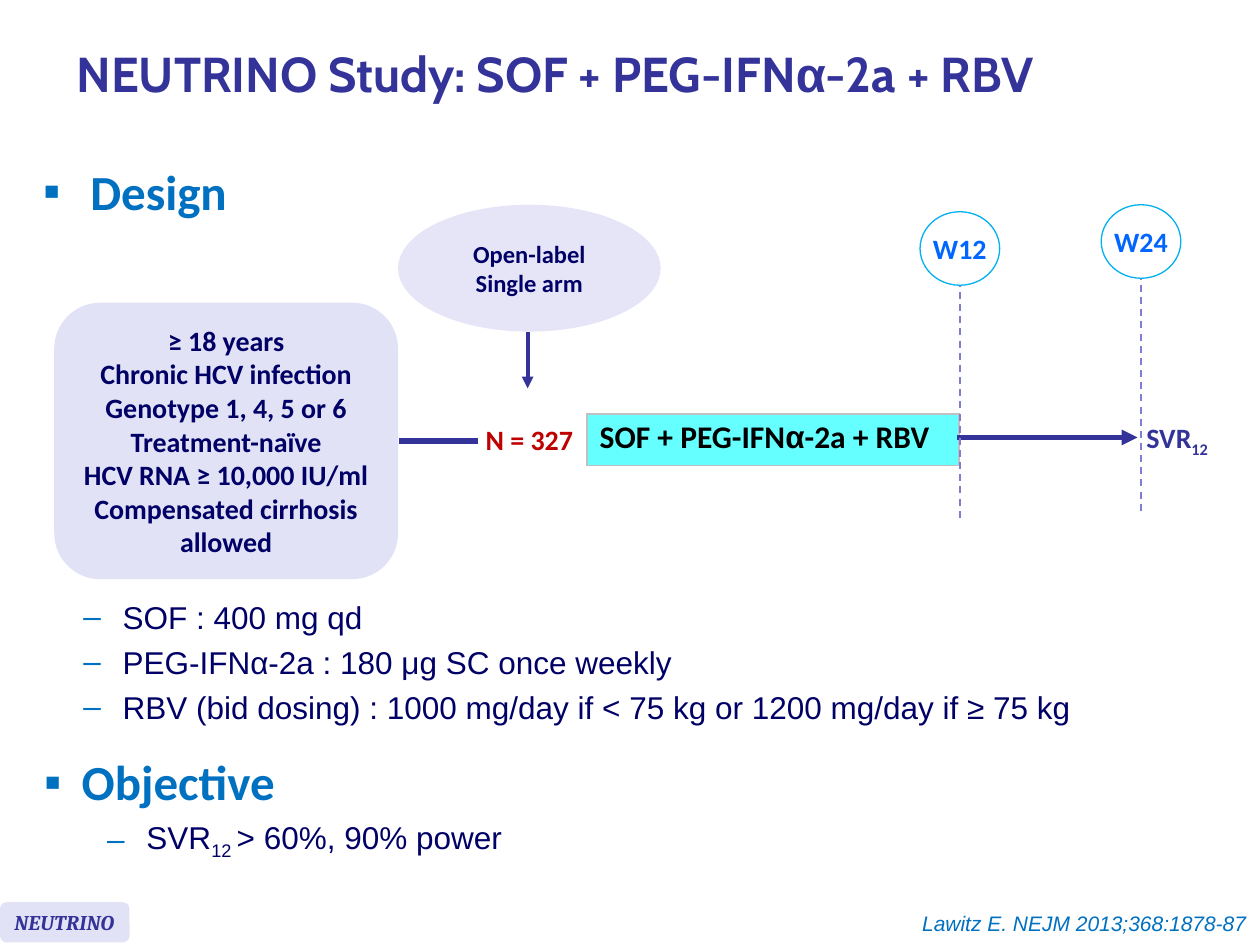
import dataclasses
import typing

import pptx
import pptx.dml.color
import pptx.enum.dml
import pptx.enum.shapes
import pptx.enum.text
import pptx.oxml.ns
import pptx.oxml.xmlchemy
import pptx.util
from lxml import etree

Pt = pptx.util.Pt
qn = pptx.oxml.ns.qn
Align = pptx.enum.text.PP_ALIGN
Anchor = pptx.enum.text.MSO_ANCHOR
Form = pptx.enum.shapes.MSO_SHAPE

HUES = {
    "indigo": "333399", "navy": "000066", "blue": "0070C0", "bright": "0066FF",
    "sky": "00B0F0", "dash": "7E7ED4", "pale": "E5E5F7", "lilac": "E2E2F6",
    "red": "C00000", "cyan": "66FFFF", "grey": "C0C0C0", "white": "FFFFFF",
    "black": "000000",
}


@dataclasses.dataclass
class Style:
    size: float
    hue: str
    font: str = "Calibri"
    bold: bool = True
    slant: bool = False


@dataclasses.dataclass
class Span:
    text: str
    font: typing.Optional[str] = None
    sub: bool = False


@dataclasses.dataclass
class Line:
    spans: list[Span]
    style: Style
    mark: str = ""
    level: int = 0
    indent: float = 0
    hang: float = 0
    gap: float = 0
    align: Align = Align.LEFT
    lead: typing.Optional[float] = None


@dataclasses.dataclass
class Box:
    left: float
    top: float
    width: float
    height: float
    lines: list[Line]
    form: typing.Optional[Form] = None
    fill: str = ""
    edge: str = ""


@dataclasses.dataclass
class Rule:
    start: tuple[float, float]
    end: tuple[float, float]
    hue: str
    width: float
    dash: bool = False
    head: bool = False


def color(name: str) -> pptx.dml.color.RGBColor:
    return pptx.dml.color.RGBColor.from_string(HUES[name])


def add_mark(para, line: Line) -> None:
    props = para._p.get_or_add_pPr()
    props.set("marL", str(Pt(line.indent)))
    props.set("indent", str(-Pt(line.hang)))
    tint = etree.SubElement(props, qn("a:buClr"))
    etree.SubElement(tint, qn("a:srgbClr"), val=HUES["blue"])
    etree.SubElement(props, qn("a:buFont"), typeface="Arial")
    etree.SubElement(props, qn("a:buChar"), char=line.mark)


def write(frame, lines: list[Line]) -> None:
    for index, line in enumerate(lines):
        para = frame.add_paragraph() if index else frame.paragraphs[0]
        para.level = line.level
        para.alignment = line.align
        para.space_before = Pt(line.gap if index else 0)
        if line.lead:
            para.line_spacing = line.lead
        if line.mark:
            add_mark(para, line)
        for span in line.spans:
            run = para.add_run()
            run.text = span.text
            font = run.font
            font.name = span.font or line.style.font
            font.size = Pt(line.style.size)
            font.bold = line.style.bold
            font.italic = line.style.slant
            font.color.rgb = color(line.style.hue)
            if span.sub:
                run._r.get_or_add_rPr().set("baseline", "-25000")


def place(shape, box: Box, wrap: bool, anchor: Anchor) -> None:
    shape.left, shape.top = Pt(box.left), Pt(box.top)
    shape.width, shape.height = Pt(box.width), Pt(box.height)
    frame = shape.text_frame
    frame.word_wrap = wrap
    frame.auto_size = pptx.enum.text.MSO_AUTO_SIZE.NONE
    frame.vertical_anchor = anchor
    write(frame, box.lines)


def draw_box(slide, box: Box, wrap: bool = False) -> None:
    area = Pt(box.left), Pt(box.top), Pt(box.width), Pt(box.height)
    if box.form is None:
        place(slide.shapes.add_textbox(*area), box, wrap, Anchor.TOP)
        return
    shape = slide.shapes.add_shape(box.form, *area)
    shape.shadow.inherit = False
    shape.fill.solid()
    shape.fill.fore_color.rgb = color(box.fill)
    if box.edge:
        shape.line.color.rgb = color(box.edge)
        shape.line.width = Pt(0.75)
    else:
        shape.line.fill.background()
    place(shape, box, wrap, Anchor.MIDDLE)


def draw_rule(slide, rule: Rule) -> None:
    ends = [Pt(value) for value in rule.start + rule.end]
    link = slide.shapes.add_connector(pptx.enum.shapes.MSO_CONNECTOR.STRAIGHT, *ends)
    link.line.color.rgb = color(rule.hue)
    link.line.width = Pt(rule.width)
    if rule.dash:
        link.line.dash_style = pptx.enum.dml.MSO_LINE.DASH
    if rule.head:
        etree.SubElement(link.get_or_add_ln(), qn("a:tailEnd"), type="triangle")
    etree.SubElement(link._element.spPr, qn("a:effectLst"))


def draw_drug(slide, box: Box) -> None:
    area = Pt(box.left), Pt(box.top), Pt(box.width), Pt(box.height)
    table = slide.shapes.add_table(1, 1, *area).table
    table.first_row = table.horz_banding = False
    cell = table.cell(0, 0)
    props = cell._tc.get_or_add_tcPr()
    for side in ("L", "R", "T", "B"):
        edge = etree.SubElement(props, qn(f"a:ln{side}"), w=str(Pt(1)))
        fill = etree.SubElement(edge, qn("a:solidFill"))
        etree.SubElement(fill, qn("a:srgbClr"), val=HUES["grey"])
    cell.fill.solid()
    cell.fill.fore_color.rgb = color(box.fill)
    cell.vertical_anchor = Anchor.MIDDLE
    write(cell.text_frame, box.lines)


def center(style: Style, *texts: str) -> list[Line]:
    return [Line([Span(text)], style, align=Align.CENTER) for text in texts]


def drug(start: str) -> list[Span]:
    return [Span(start), Span("α", "Arial"), Span("-2a + RBV")]


def head(text: str, hang: float) -> Line:
    return Line([Span(text)], Style(28, "blue"), "▪", indent=hang, hang=hang)


def item(*spans: Span) -> Line:
    style = Style(18, "navy", "Arial", False)
    return Line(list(spans), style, "–", 1, 58.5, 22.5, 4.2)


def main() -> None:
    deck = pptx.Presentation()
    deck.slide_width, deck.slide_height = Pt(720), Pt(540)
    slide = deck.slides.add_slide(deck.slide_layouts[1])

    title = Line(drug("NEUTRINO Study: SOF + PEG-IFN"), Style(28, "indigo", "Cabin"), lead=0.85)
    place(slide.shapes.title, Box(36.5, 6, 657, 77, [title]), True, Anchor.MIDDLE)
    goal = [head("Objective", 21.5), item(Span("SVR"), Span("12 ", sub=True), Span("> 60%, 90% power"))]
    place(slide.placeholders[1], Box(18, 426, 657, 82, goal), True, Anchor.TOP)

    draw_rule(slide, Rule((301.5, 190), (301.5, 222), "indigo", 2.25, head=True))
    name = Line(drug("SOF + PEG-IFN"), Style(18, "black"), lead=0.8)
    draw_drug(slide, Box(335.5, 236.5, 212.5, 29.5, [name], fill="cyan"))
    draw_rule(slide, Rule((228, 252), (273, 252), "indigo", 3))
    draw_rule(slide, Rule((547, 250), (650, 250), "indigo", 3, head=True))

    for text, mid, top in (("W12", 548.5, 121), ("W24", 652, 117)):
        draw_rule(slide, Rule((mid, top + 32), (mid, top + 175), "dash", 1, dash=True))
        draw_box(slide, Box(mid - 22.75, top, 45.5, 42, center(Style(16, "bright"), text),
                            Form.OVAL, "white", "sky"))

    people = center(Style(16, "navy"), "≥ 18 years", "Chronic HCV infection",
                    "Genotype 1, 4, 5 or 6", "Treatment-naïve", "HCV RNA ≥ 10,000 IU/ml",
                    "Compensated cirrhosis", "allowed")
    arm = center(Style(14, "navy"), "Open-label", "Single arm")
    tag = Line([Span("NEUTRINO")], Style(12, "indigo", "Cambria", slant=True))
    result = Line([Span("SVR"), Span("12", sub=True)], Style(16, "indigo"))
    source = Line([Span("Lawitz E. NEJM 2013;368:1878-87")],
                  Style(12, "blue", "Arial", False, True), align=Align.RIGHT)
    for box in (
        Box(227.5, 117, 150, 72.5, arm, Form.OVAL, "pale"),
        Box(31, 173, 196.5, 158, people, Form.ROUNDED_RECTANGLE, "lilac"),
        Box(0, 515.5, 74, 23, [tag], Form.ROUNDED_RECTANGLE, "lilac"),
        Box(648, 236.5, 52, 26.5, [result]),
        Box(270, 238, 65, 26.5, center(Style(16, "red"), "N = 327")),
        Box(515, 517, 204.5, 22, [source]),
    ):
        draw_box(slide, box)

    doses = [item(Span(text)) for text in (
        "SOF : 400 mg qd", "PEG-IFNα-2a : 180 μg SC once weekly",
        "RBV (bid dosing) : 1000 mg/day if < 75 kg or 1200 mg/day if ≥ 75 kg")]
    draw_box(slide, Box(17.5, 88.5, 142.5, 45.5, [head("Design", 27)]), True)
    draw_box(slide, Box(4.5, 338, 652, 90.5, doses), True)
    deck.save("out.pptx")


if __name__ == "__main__":
    main()
